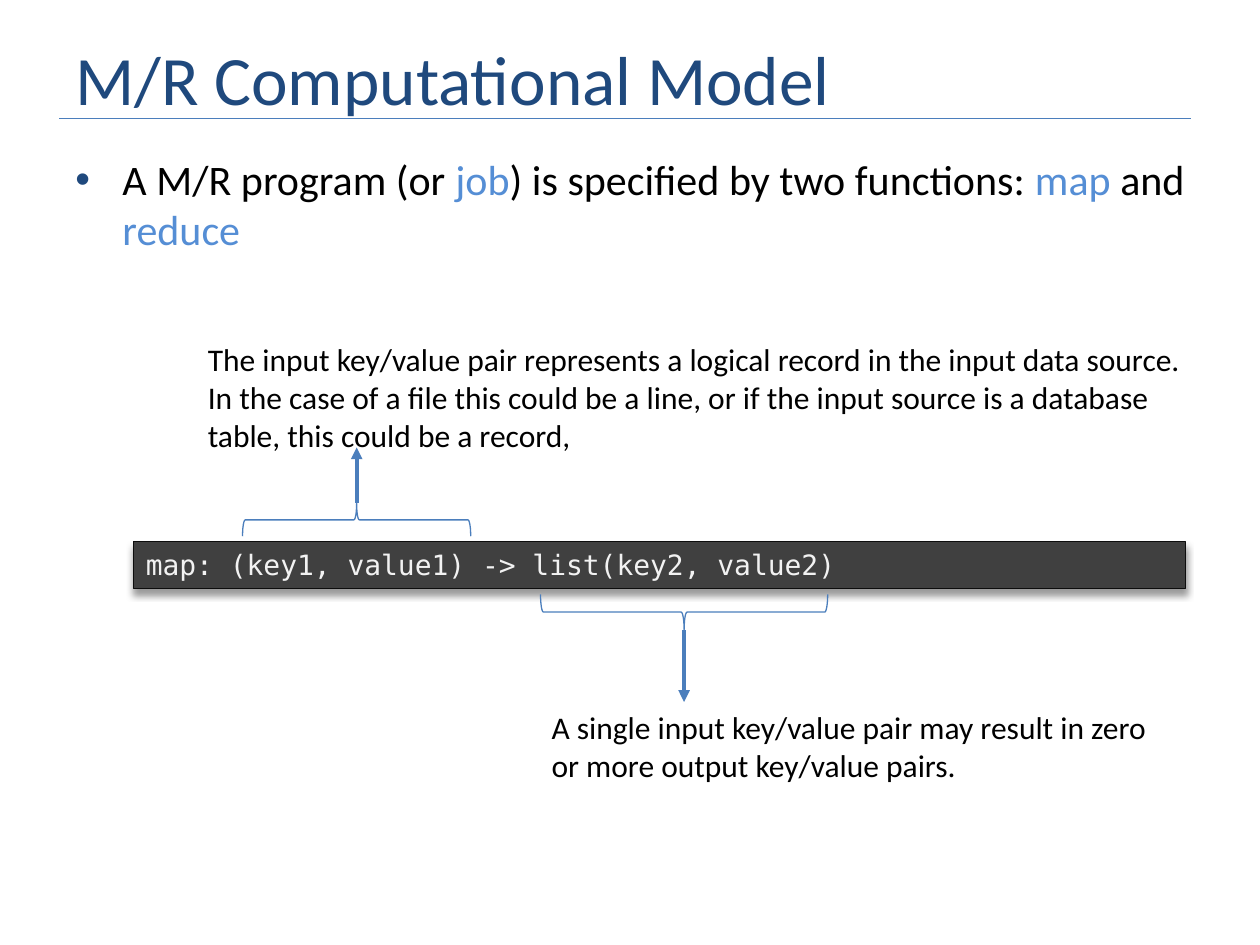
from lxml.etree import SubElement
from pptx import Presentation
from pptx.dml.color import RGBColor
from pptx.enum.shapes import MSO_CONNECTOR as Connector, MSO_SHAPE as Shape
from pptx.enum.text import MSO_ANCHOR as Anchor, PP_ALIGN as Align
from pptx.oxml.ns import qn
from pptx.util import Cm, Pt

NAVY, BLUE, ACCENT = "1F497D", "4B7EBC", "558ED5"


def color(value):
    return RGBColor.from_string(value)


def write(shape, *runs, size=18, font="Calibri", fill="000000",
          anchor=Anchor.TOP, align=Align.LEFT):
    """Write runs into a shape; a run is a text or a (text, colour) pair."""
    frame = shape.text_frame
    frame.word_wrap = True
    frame.vertical_anchor = anchor
    paragraph = frame.paragraphs[0]
    paragraph.alignment = align
    for item in runs:
        text, run_fill = (item, fill) if isinstance(item, str) else item
        run = paragraph.add_run()
        run.text = text
        run.font.size = Pt(size)
        run.font.name = font
        run.font.color.rgb = color(run_fill)
    return paragraph


def add_text(slide, left, top, width, height, *runs, **text_format):
    box = slide.shapes.add_textbox(Cm(left), Cm(top), Cm(width), Cm(height))
    return write(box, *runs, **text_format)


def add_bullet(paragraph, fill, indent):
    properties = paragraph._p.get_or_add_pPr()
    properties.set("marL", str(Cm(indent)))
    properties.set("indent", str(-Cm(indent)))
    bullet_color = SubElement(properties, qn("a:buClr"))
    SubElement(bullet_color, qn("a:srgbClr"), val=fill)
    SubElement(properties, qn("a:buFont"), typeface="Arial")
    SubElement(properties, qn("a:buChar"), char="•")


def add_line(slide, x1, y1, x2, y2, width=0.75, arrow=False):
    line = slide.shapes.add_connector(
        Connector.STRAIGHT, Cm(x1), Cm(y1), Cm(x2), Cm(y2))
    line.line.color.rgb = color(BLUE)
    line.line.width = Pt(width)
    if arrow:
        SubElement(line.line._get_or_add_ln(), qn("a:tailEnd"), type="triangle")
    SubElement(line._element.spPr, qn("a:effectLst"))


def add_brace(slide, center_x, center_y, depth, span, rotation):
    """Add a right brace turned about its centre."""
    brace = slide.shapes.add_shape(
        Shape.RIGHT_BRACE, Cm(center_x - depth / 2), Cm(center_y - span / 2),
        Cm(depth), Cm(span))
    brace.rotation = rotation
    brace.shadow.inherit = False
    brace.fill.background()
    brace.line.color.rgb = color(BLUE)
    brace.line.width = Pt(0.75)


def add_shadow(shape):
    shape.shadow.inherit = False
    effects = shape._element.spPr.find(qn("a:effectLst"))
    shadow = SubElement(
        effects, qn("a:outerShdw"), blurRad=str(Pt(4)), dist=str(Pt(3)),
        dir="5400000", rotWithShape="0")
    shadow_color = SubElement(shadow, qn("a:srgbClr"), val="000000")
    SubElement(shadow_color, qn("a:alpha"), val="40000")


def add_code(slide, left, top, width, height, code):
    box = slide.shapes.add_shape(
        Shape.RECTANGLE, Cm(left), Cm(top), Cm(width), Cm(height))
    box.fill.solid()
    box.fill.fore_color.rgb = color("404040")
    box.line.color.rgb = color("0D0D0D")
    box.line.width = Pt(0.75)
    add_shadow(box)
    write(box, code, size=16, font="DejaVu Sans Mono", fill="F2F2F2")


def main():
    presentation = Presentation()
    presentation.slide_width, presentation.slide_height = Cm(25.4), Cm(19.05)
    slide = presentation.slides.add_slide(presentation.slide_layouts[6])

    add_line(slide, 1.19, 2.39, 24, 2.39)
    add_text(slide, 1.27, 0.76, 22.86, 1.63, "M/R Computational Model",
             size=39.6, fill=NAVY, anchor=Anchor.MIDDLE)
    statement = add_text(
        slide, 1.27, 2.97, 22.86, 14.05,
        "A M/R program (or ", ("job", ACCENT),
        ") is specified by two functions: ", ("map", ACCENT),
        " and ", ("reduce", ACCENT), size=24, align=Align.JUSTIFY)
    statement.space_before = Pt(4.8)
    add_bullet(statement, NAVY, 0.95)

    add_code(slide, 2.69, 10.92, 21.21, 0.94,
             "map: (key1, value1) -> list(key2, value2)")

    input_x, output_x = 7.19, 13.79
    add_text(slide, 3.94, 6.73, 20.19, 2.57,
             "The input key/value pair represents a logical record in the "
             "input data source. In the case of a file this could be a line, "
             "or if the input source is a database table, this could be a "
             "record,")
    add_line(slide, input_x, 10.13, input_x, 9.02, width=2.25, arrow=True)
    add_brace(slide, input_x, 10.48, 0.66, 4.6, 270)

    add_text(slide, 10.87, 14.15, 12.73, 1.8,
             "A single input key/value pair may result in zero or more "
             "output key/value pairs.")
    add_line(slide, output_x, 12.7, output_x, 14.15, width=2.25, arrow=True)
    add_brace(slide, output_x, 12.34, 0.71, 5.79, 90)

    presentation.save("out.pptx")


if __name__ == "__main__":
    main()
